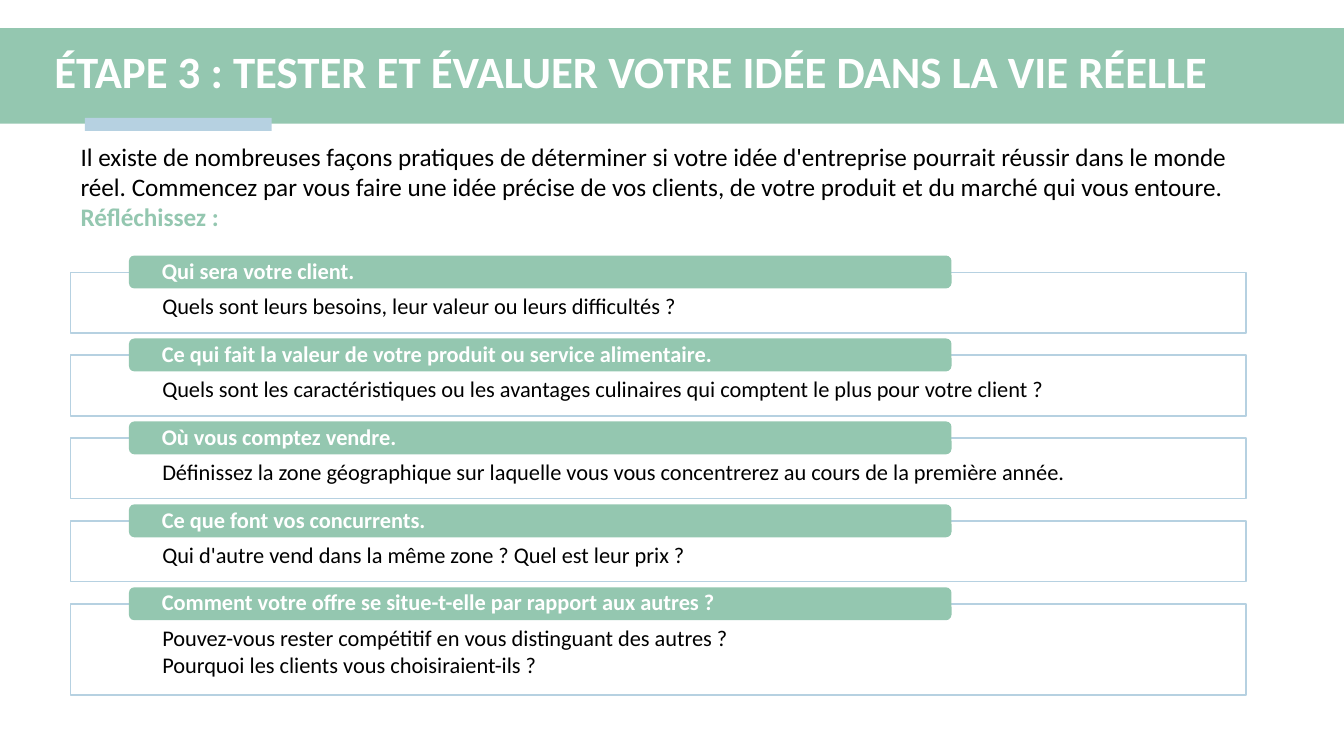
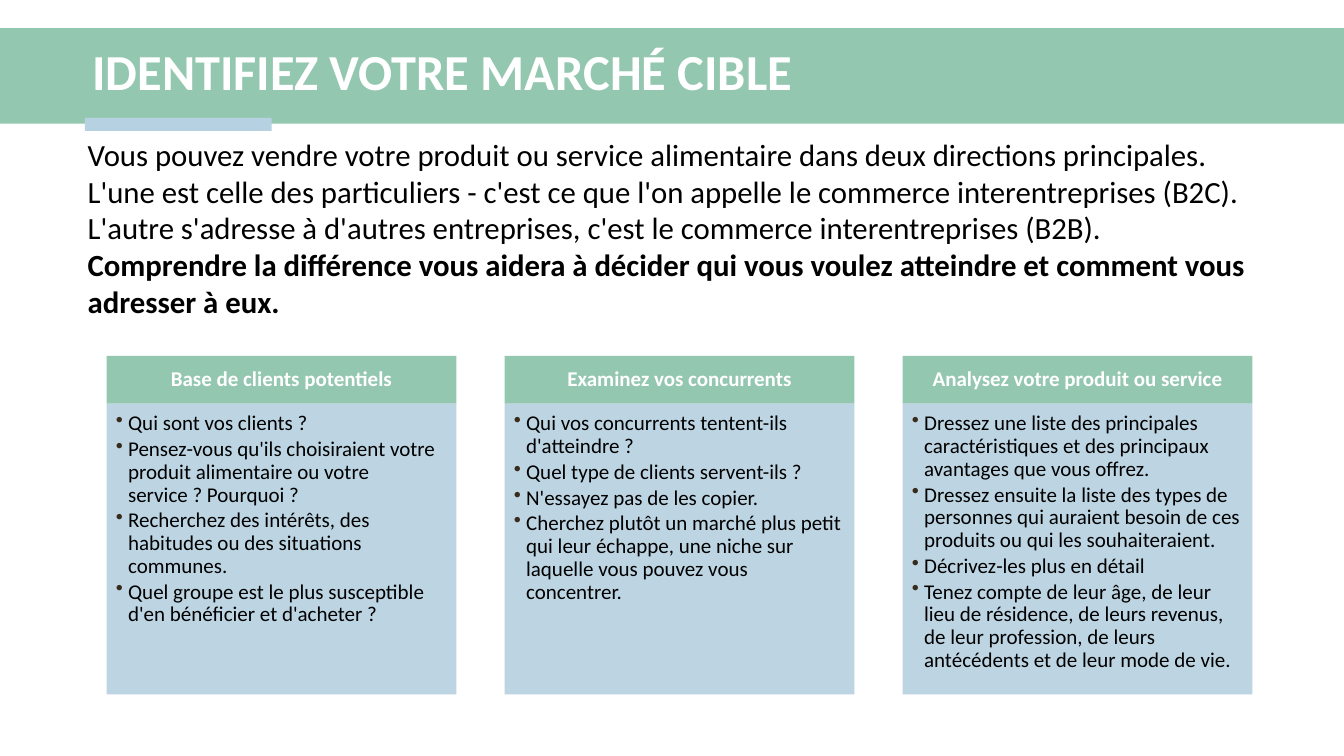
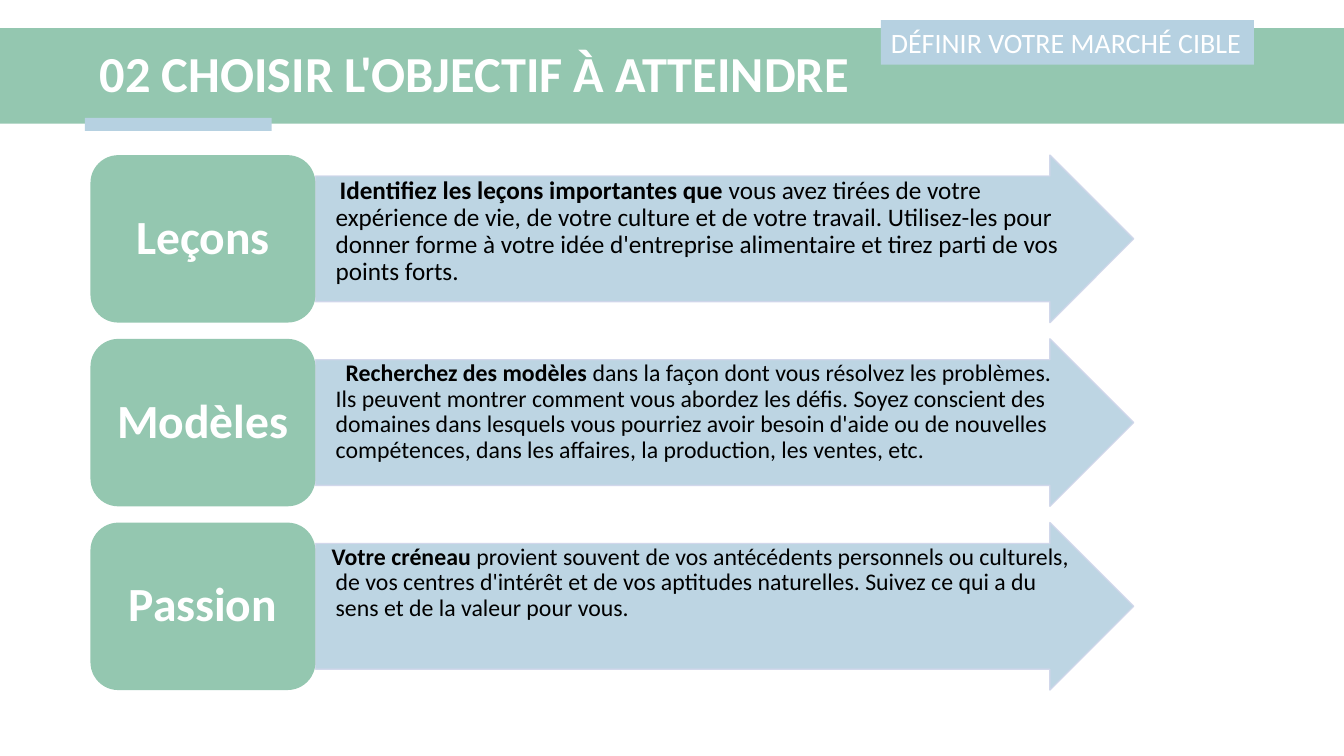
from dataclasses import dataclass

from lxml import etree
from pptx import Presentation
from pptx.dml.color import RGBColor
from pptx.enum.shapes import MSO_SHAPE
from pptx.enum.text import MSO_ANCHOR, PP_ALIGN
from pptx.oxml.ns import qn
from pptx.util import Cm, Pt

RECTANGLE = MSO_SHAPE.RECTANGLE
ROUNDED = MSO_SHAPE.ROUNDED_RECTANGLE
ARROW = MSO_SHAPE.RIGHT_ARROW
TOP, MIDDLE = MSO_ANCHOR.TOP, MSO_ANCHOR.MIDDLE
LEFT, CENTER = PP_ALIGN.LEFT, PP_ALIGN.CENTER


@dataclass(frozen=True)
class Theme:
    font: str = "Calibri"
    green: str = "94C7B0"
    blue: str = "B6D1E1"
    arrow_edge: str = "CFD5EA"
    bullet: str = "382B1B"
    white: str = "FFFFFF"
    black: str = "000000"
    title_size: int = 36
    long_title_size: int = 32
    label_size: int = 34
    lead_size: int = 22
    tag_size: int = 20
    intro_size: int = 18
    question_size: int = 16
    column_size: int = 15
    tight: float = 0.9


THEME = Theme()
PAGE_WIDTH, PAGE_HEIGHT = 33.87, 19.05
TITLE_RIGHT = 32.4
TEXT_INSETS = (0.25, 0.13, 0.25, 0.13)

QUESTIONS = [
    ("Qui sera votre client.",
     ["Quels sont leurs besoins, leur valeur ou leurs difficultés ?"]),
    ("Ce qui fait la valeur de votre produit ou service alimentaire.",
     ["Quels sont les caractéristiques ou les avantages culinaires qui "
      "comptent le plus pour votre client ?"]),
    ("Où vous comptez vendre.",
     ["Définissez la zone géographique sur laquelle vous vous concentrerez "
      "au cours de la première année."]),
    ("Ce que font vos concurrents.",
     ["Qui d'autre vend dans la même zone ? Quel est leur prix ?"]),
    ("Comment votre offre se situe-t-elle par rapport aux autres ?",
     ["Pouvez-vous rester compétitif en vous distinguant des autres ?",
      "Pourquoi les clients vous choisiraient-ils ?"]),
]

COLUMNS = [
    ("Base de clients potentiels", [
        "Qui sont vos clients ?",
        "Pensez-vous qu'ils choisiraient votre produit alimentaire ou votre "
        "service ? Pourquoi ?",
        "Recherchez des intérêts, des habitudes ou des situations communes.",
        "Quel groupe est le plus susceptible d'en bénéficier et d'acheter ?",
    ]),
    ("Examinez vos concurrents", [
        "Qui vos concurrents tentent-ils d'atteindre ?",
        "Quel type de clients servent-ils ?",
        "N'essayez pas de les copier.",
        "Cherchez plutôt un marché plus petit qui leur échappe, une niche sur "
        "laquelle vous pouvez vous concentrer.",
    ]),
    ("Analysez votre produit ou service", [
        "Dressez une liste des principales caractéristiques et des principaux "
        "avantages que vous offrez.",
        "Dressez ensuite la liste des types de personnes qui auraient besoin "
        "de ces produits ou qui les souhaiteraient.",
        "Décrivez-les plus en détail",
        "Tenez compte de leur âge, de leur lieu de résidence, de leurs "
        "revenus, de leur profession, de leurs antécédents et de leur mode "
        "de vie.",
    ]),
]

# Label, bold opening, rest of the text, type size, first-line indent
GOALS = [
    ("Leçons", "Identifiez les leçons importantes que ",
     "vous avez tirées de votre expérience de vie, de votre culture et de "
     "votre travail. Utilisez-les pour donner forme à votre idée "
     "d'entreprise alimentaire et tirez parti de vos points forts.", 18, 0.1),
    ("Modèles", "Recherchez des modèles ",
     "dans la façon dont vous résolvez les problèmes. Ils peuvent montrer "
     "comment vous abordez les défis. Soyez conscient des domaines dans "
     "lesquels vous pourriez avoir besoin d'aide ou de nouvelles compétences, "
     "dans les affaires, la production, les ventes, etc.", 17, 0.25),
    ("Passion", "Votre créneau ",
     "provient souvent de vos antécédents personnels ou culturels, de vos "
     "centres d'intérêt et de vos aptitudes naturelles. Suivez ce qui a du "
     "sens et de la valeur pour vous.", 17, -0.1),
]


# Building blocks
def set_frame(shape, insets, anchor):
    frame = shape.text_frame
    frame.word_wrap = True
    frame.vertical_anchor = anchor
    (frame.margin_left, frame.margin_top,
     frame.margin_right, frame.margin_bottom) = map(Cm, insets)


def add_box(page, place, fill, kind=RECTANGLE, edge=None, opacity=None,
            insets=TEXT_INSETS, anchor=MIDDLE):
    box = page.shapes.add_shape(kind, *map(Cm, place))
    box.shadow.inherit = False
    box.fill.solid()
    box.fill.fore_color.rgb = RGBColor.from_string(fill)
    if edge:
        box.line.color.rgb = RGBColor.from_string(edge)
        box.line.width = Pt(1)
    else:
        box.line.fill.background()
    if opacity:
        for color in box.element.spPr.iter(qn("a:srgbClr")):
            etree.SubElement(color, qn("a:alpha"), val=str(opacity * 1000))
    set_frame(box, insets, anchor)
    return box


def add_text_box(page, place, anchor=TOP):
    box = page.shapes.add_textbox(*map(Cm, place))
    set_frame(box, TEXT_INSETS, anchor)
    return box


def write(box, text, size, color=THEME.black, bold=False, lead="",
          align=LEFT, spacing=1.0, after=0, hang=0, first=0, bullet=False):
    """Add one paragraph; lead is a bold opening in front of the text."""
    frame = box.text_frame
    para = frame.add_paragraph() if frame.text else frame.paragraphs[0]
    properties = para._p.get_or_add_pPr()
    properties.set("marL", str(Cm(hang)))
    properties.set("indent", str(Cm(first)))
    if bullet:
        bullet_color = etree.SubElement(properties, qn("a:buClr"))
        etree.SubElement(bullet_color, qn("a:srgbClr"), val=THEME.bullet)
        etree.SubElement(properties, qn("a:buChar"), char="•")
    para.alignment = align
    para.line_spacing = spacing
    para.space_after = Pt(after)
    for words, is_bold in ((lead, True), (text, bold)):
        if words:
            span = para.add_run()
            span.text = words
            span.font.name = THEME.font
            span.font.size = Pt(size)
            span.font.bold = is_bold
            span.font.color.rgb = RGBColor.from_string(color)


# Shared page parts
def prepare_layout(deck):
    """Clear the blank layout and give it the title band and accent bar."""
    layout = deck.slide_layouts[6]
    for placeholder in list(layout.placeholders):
        layout.shapes.element.remove(placeholder.element)
    return layout


def add_page(deck, layout, title, left, top=0.86, size=THEME.title_size):
    page = deck.slides.add_slide(layout)
    if not len(layout.shapes):
        band = add_box(page, (0, 0.71, PAGE_WIDTH, 2.41), THEME.green)
        accent = add_box(page, (2.14, 2.97, 4.71, 0.33), THEME.blue)
        for part in (band, accent):
            layout.shapes.element.append(part.element)
    box = add_text_box(page, (left, top, TITLE_RIGHT - left, 2), MIDDLE)
    write(box, title, size, THEME.white, bold=True, spacing=THEME.tight)
    return page


# Repeated content elements
def add_question(page, top, heading, answers):
    height = 1.53 + 0.76 * (len(answers) - 1)
    panel = add_box(page, (1.78, top, 29.62, height), THEME.white,
                    edge=THEME.blue, insets=(2.31, 0.58, 2.31, 0.3),
                    anchor=TOP)
    for answer in answers:
        write(panel, answer, THEME.question_size, spacing=THEME.tight,
              after=2.4)
    tab = add_box(page, (3.25, top - 0.42, 20.73, 0.83), THEME.green, ROUNDED,
                  insets=(0.79, 0, 0.79, 0))
    write(tab, heading, THEME.question_size, THEME.white, bold=True,
          spacing=THEME.tight)


def add_column(page, left, heading, points):
    width = 8.81
    header = add_box(page, (left, 8.97, width, 1.2), THEME.green)
    write(header, heading, THEME.column_size, THEME.white, bold=True,
          align=CENTER, spacing=THEME.tight)
    body = add_box(page, (left, 10.17, width, 7.33), THEME.blue, opacity=90,
                   insets=(0.23, 0.23, 0.3, 0.33), anchor=TOP)
    for point in points:
        write(body, point, THEME.column_size, spacing=THEME.tight, after=2.2,
              hang=0.31, first=-0.31, bullet=True)


def add_goal(page, top, label, lead, text, size, first):
    height = 4.22
    arrow = add_box(page, (7.95, top, 20.62, height), THEME.blue, ARROW,
                    edge=THEME.arrow_edge, opacity=90,
                    insets=(0.03, 0.03, 0, 0.03), anchor=TOP)
    arrow.adjustments[0] = 0.75
    arrow.adjustments[1] = 0.5
    write(arrow, text, size, lead=lead, spacing=THEME.tight, hang=0.48,
          first=first)
    tile = add_box(page, (2.28, top, 5.67, height), THEME.green, ROUNDED,
                   insets=(0.36, 0.18, 0.36, 0.18))
    write(tile, label, THEME.label_size, THEME.white, bold=True, align=CENTER,
          spacing=THEME.tight)


# Pages
def build_questions(deck, layout):
    page = add_page(deck, layout,
                    "ÉTAPE 3 : TESTER ET ÉVALUER VOTRE IDÉE DANS LA VIE RÉELLE",
                    left=1.12, size=THEME.long_title_size)
    intro = add_text_box(page, (1.78, 3.43, 29.62, 2.57))
    write(intro, "Il existe de nombreuses façons pratiques de déterminer si "
          "votre idée d'entreprise pourrait réussir dans le monde réel. "
          "Commencez par vous faire une idée précise de vos clients, de votre "
          "produit et du marché qui vous entoure.", THEME.intro_size)
    write(intro, "Réfléchissez :", THEME.intro_size, THEME.green, bold=True)
    for index, question in enumerate(QUESTIONS):
        add_question(page, 6.86 + 2.09 * index, *question)


def build_market(deck, layout):
    page = add_page(deck, layout, "IDENTIFIEZ VOTRE MARCHÉ CIBLE", left=2.08)
    intro = add_text_box(page, (1.96, 3.28, 29.97, 4.95))
    write(intro, "Vous pouvez vendre votre produit ou service alimentaire "
          "dans deux directions principales. L'une est celle des particuliers "
          "- c'est ce que l'on appelle le commerce interentreprises (B2C). "
          "L'autre s'adresse à d'autres entreprises, c'est le commerce "
          "interentreprises (B2B).", THEME.lead_size)
    write(intro, "Comprendre la différence vous aidera à décider qui vous "
          "voulez atteindre et comment vous adresser à eux.",
          THEME.lead_size, bold=True)
    for index, column in enumerate(COLUMNS):
        add_column(page, 2.69 + 10.03 * index, *column)


def build_goals(deck, layout):
    page = add_page(deck, layout, "02 CHOISIR L'OBJECTIF À ATTEINDRE",
                    left=2.26, top=0.91)
    tag = add_box(page, (22.2, 0.51, 9.4, 1.12), THEME.blue,
                  insets=(0.25, 0.13, 0, 0.13))
    write(tag, "DÉFINIR VOTRE MARCHÉ CIBLE", THEME.tag_size, THEME.white)
    for index, goal in enumerate(GOALS):
        add_goal(page, 3.91 + 4.63 * index, *goal)


def main():
    deck = Presentation()
    deck.slide_width, deck.slide_height = Cm(PAGE_WIDTH), Cm(PAGE_HEIGHT)
    layout = prepare_layout(deck)
    for build in (build_questions, build_market, build_goals):
        build(deck, layout)
    deck.save("out.pptx")


if __name__ == "__main__":
    main()
